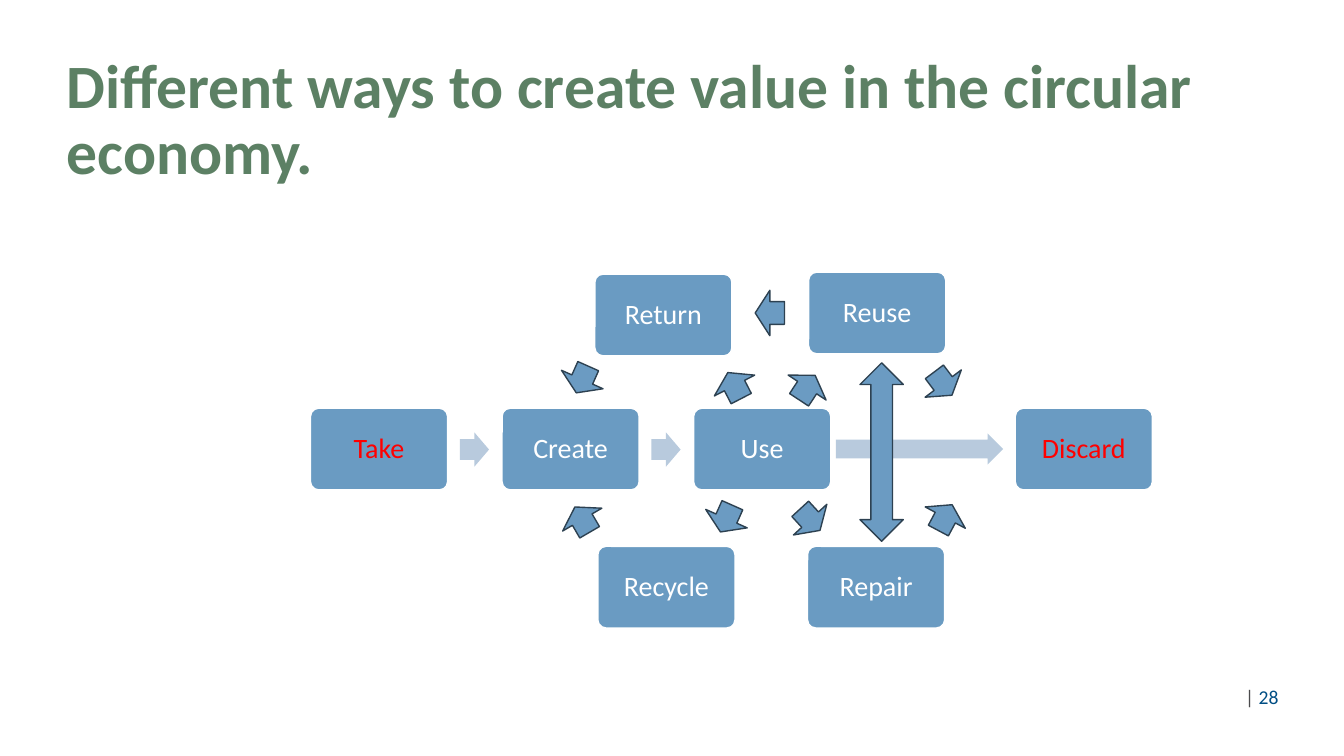
import pptx
import pptx.util
import pptx.dml.color
import pptx.enum.shapes
import pptx.enum.text

SHAPE = pptx.enum.shapes.MSO_SHAPE
ALIGN = pptx.enum.text.PP_ALIGN
EMU_PER_PX = 9144  # 100 px to the inch

FONT = "Calibri"
WHITE, RED, GREEN = "FFFFFF", "FF0000", "5C8064"
BOX_FILL, FLOW_FILL = "6A9BC2", "B8CADD"
LOOP_FILL, LOOP_LINE = "6B9BC2", "2D4151"
GREY, NAVY = "4B4B4D", "004E84"

BOX_WIDTH, BOX_HEIGHT = 136, 81
CHAIN_LEFT, CHAIN_TOP, CHAIN_STEP = 308, 405, 190
LOOP_WIDTH, LOOP_HEIGHT = 29, 45

# Main chain: label, left, text colour
CHAIN = [
    ("Take", CHAIN_LEFT, RED),
    ("Create", CHAIN_LEFT + CHAIN_STEP, WHITE),
    ("Use", CHAIN_LEFT + 2 * CHAIN_STEP, WHITE),
    ("Discard", 1007, RED),
]
# Value loops: label, left, top
LOOPS = [
    ("Recycle", 593, 542),
    ("Repair", 801, 542),
    ("Return", 590, 272),
    ("Reuse", 802, 270),
]
# Loop arrows: left, top, rotation
LOOP_ARROWS = [
    (563, 354, 294),
    (714, 360, 62.7),
    (749, 288, 0),
    (786, 362, 123.3),
    (563, 493, 59.8),
    (706, 492, 294),
    (789, 493, 227.4),
    (921, 358, 233),
    (923, 491, 118),
]


def px(length):
    return pptx.util.Emu(length * EMU_PER_PX)


def color(value):
    return pptx.dml.color.RGBColor.from_string(value)


def set_frame(frame, inset_x, inset_y):
    frame.word_wrap = True
    frame.auto_size = pptx.enum.text.MSO_AUTO_SIZE.NONE
    frame.vertical_anchor = pptx.enum.text.MSO_ANCHOR.MIDDLE
    frame.margin_left = frame.margin_right = px(inset_x)
    frame.margin_top = frame.margin_bottom = px(inset_y)


def set_para(para, size, text_color, align, spacing=0.9, bold=False):
    para.alignment = align
    para.line_spacing = spacing
    para.font.name = FONT
    para.font.size = pptx.util.Pt(size)
    para.font.bold = bold
    para.font.color.rgb = color(text_color)


def add_shape(page, kind, place, adjustments, fill, line=None, rotation=0):
    shape = page.shapes.add_shape(kind, *map(px, place))
    for index, value in enumerate(adjustments):
        shape.adjustments[index] = value
    shape.shadow.inherit = False
    shape.rotation = rotation
    shape.fill.solid()
    shape.fill.fore_color.rgb = color(fill)
    if line:
        shape.line.color.rgb = color(line)
        shape.line.width = pptx.util.Pt(1)
    else:
        shape.line.fill.background()
    return shape


def add_box(page, label, left, top, text_color=WHITE):
    place = (left, top, BOX_WIDTH, BOX_HEIGHT)
    box = add_shape(page, SHAPE.ROUNDED_RECTANGLE, place, [0.1], BOX_FILL, WHITE)
    set_frame(box.text_frame, 10, 10)
    para = box.text_frame.paragraphs[0]
    para.text = label
    set_para(para, 20, text_color, ALIGN.CENTER)


def add_flow_arrow(page, *place):
    add_shape(page, SHAPE.RIGHT_ARROW, place, [0.6, 0.5], FLOW_FILL)


def add_loop_arrow(page, kind, place, rotation=0):
    add_shape(page, kind, place, [0.5, 0.5], LOOP_FILL, LOOP_LINE, rotation)


def set_title(page, text):
    title = page.shapes.title
    title.left, title.top, title.width, title.height = map(px, (56, 42, 1209, 157))
    set_frame(title.text_frame, 10, 5)
    para = title.text_frame.paragraphs[0]
    para.text = text
    set_para(para, 44, GREEN, ALIGN.LEFT, bold=True)


def add_page_number(page, number):
    box = page.shapes.add_textbox(*map(px, (1235, 679, 68, 24)))
    set_frame(box.text_frame, 0, 0)
    para = box.text_frame.paragraphs[0]
    set_para(para, 14, GREY, ALIGN.LEFT, spacing=1.0)
    for text, text_color in (("| ", GREY), (number, NAVY)):
        span = para.add_run()
        span.text = text
        span.font.color.rgb = color(text_color)


def main():
    deck = pptx.Presentation()
    deck.slide_width, deck.slide_height = px(1333), px(750)
    page = deck.slides.add_slide(deck.slide_layouts[5])

    # Title and page number
    set_title(page, "Different ways to create value in the circular economy.")
    add_page_number(page, "28")

    # Chain from Take to Discard
    for label, left, text_color in CHAIN:
        add_box(page, label, left, CHAIN_TOP, text_color)
    for step in range(2):
        add_flow_arrow(page, 456 + step * CHAIN_STEP, 429, 29, 34)
    add_flow_arrow(page, 829, 430, 166, 31)

    # Loops above and below the chain
    for label, left, top in LOOPS:
        add_box(page, label, left, top)
    for left, top, rotation in LOOP_ARROWS:
        place = (left, top, LOOP_WIDTH, LOOP_HEIGHT)
        add_loop_arrow(page, SHAPE.LEFT_ARROW, place, rotation)
    add_loop_arrow(page, SHAPE.UP_DOWN_ARROW, (853, 360, 43, 177))

    deck.save("out.pptx")


if __name__ == "__main__":
    main()
